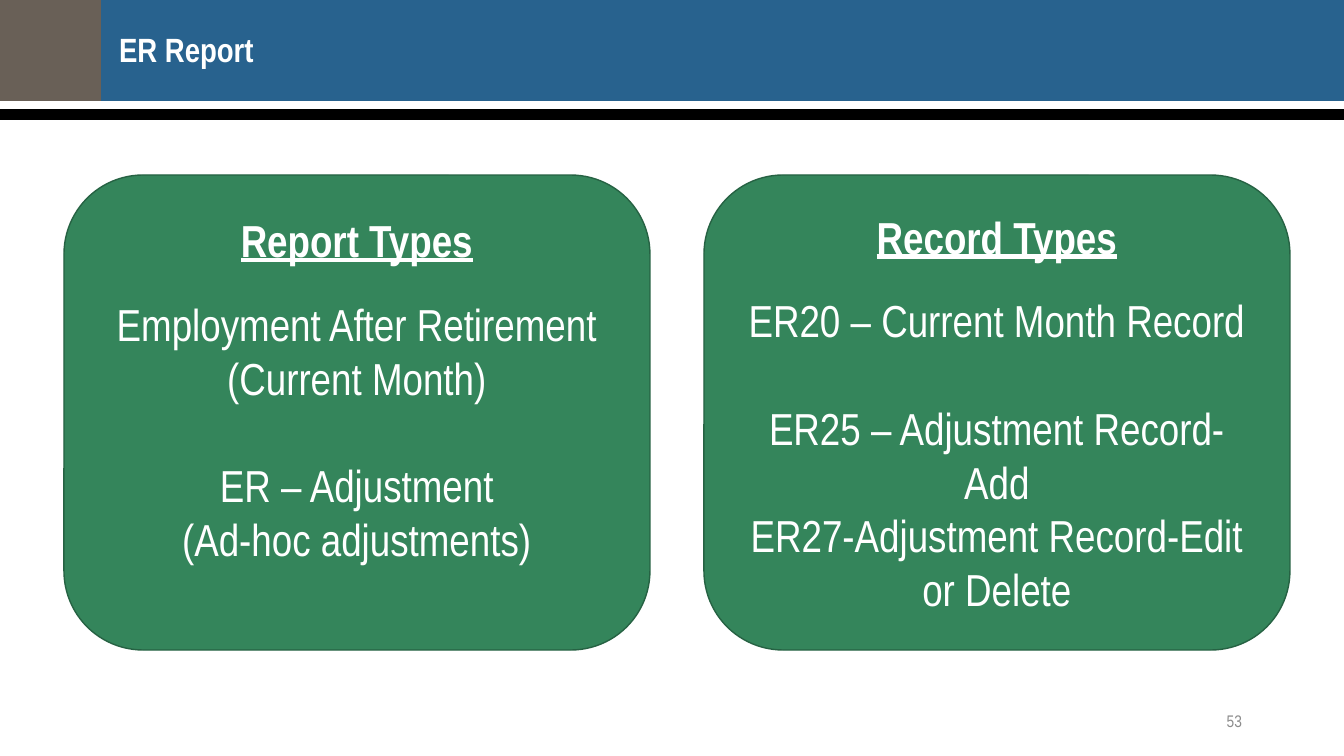
from pptx import Presentation
from pptx.dml.color import RGBColor
from pptx.enum.shapes import MSO_SHAPE as Shape
from pptx.enum.text import MSO_ANCHOR as Anchor, PP_ALIGN as Align
from pptx.util import Pt

PX = 12192000 / 1344


def px(*lengths):
    return [round(length * PX) for length in lengths]


def color(hex_code):
    return RGBColor.from_string(hex_code)


deck = Presentation()
deck.slide_width, deck.slide_height = px(1344, 756)
slide = deck.slides.add_slide(deck.slide_layouts[6])

header_bands = [
    (101, 0, 1243, 101, "28628E"),
    (0, 0, 101, 101, "696057"),
    (0, 109, 1344, 11, "000000"),
]
for *bounds, fill in header_bands:
    band = slide.shapes.add_shape(Shape.RECTANGLE, *px(*bounds))
    band.shadow.inherit = False
    band.fill.solid()
    band.fill.fore_color.rgb = color(fill)
    band.line.fill.background()

labels = [
    ("53", (950, 701, 302, 40), 12, "8C8C8C", False, Align.RIGHT, Anchor.MIDDLE, 10, 1.0),
    ("ER Report", (119, 33, 1132, 56), 24, "FFFFFF", True, Align.LEFT, Anchor.TOP, 0, 0.9),
]
for text, bounds, size, ink, bold, align, anchor, inset, spacing in labels:
    frame = slide.shapes.add_textbox(*px(*bounds)).text_frame
    frame.word_wrap = True
    frame.vertical_anchor = anchor
    frame.margin_left, frame.margin_right = px(inset, inset)
    frame.margin_top = frame.margin_bottom = 0
    paragraph = frame.paragraphs[0]
    paragraph.text = text
    paragraph.alignment = align
    paragraph.line_spacing = spacing
    paragraph.font.name = "Arial Narrow"
    paragraph.font.size = Pt(size)
    paragraph.font.bold = bold
    paragraph.font.color.rgb = color(ink)

cards = [
    (52, [
        ("Report Types", 0),
        ("Employment After Retirement", 21.5),
        ("(Current Month)", 0),
        ("ER – Adjustment", 38.3),
        ("(Ad-hoc adjustments)", 0),
    ]),
    (5, [
        ("Record Types", 0),
        ("ER20 – Current Month Record", 21.5),
        ("ER25 – Adjustment Record-Add", 38.3),
        ("ER27-Adjustment Record-Edit or Delete", 0),
    ]),
]
for column, (bottom_inset, lines) in enumerate(cards):
    card = slide.shapes.add_shape(Shape.ROUNDED_RECTANGLE, *px(64 + 640 * column, 175, 586, 475))
    card.shadow.inherit = False
    card.fill.solid()
    card.fill.fore_color.rgb = color("34855B")
    card.line.color.rgb = color("266243")
    card.line.width = Pt(1)
    frame = card.text_frame
    frame.word_wrap = True
    frame.vertical_anchor = Anchor.MIDDLE
    frame.margin_bottom = px(bottom_inset)[0]
    for row, (text, gap) in enumerate(lines):
        paragraph = frame.add_paragraph() if row else frame.paragraphs[0]
        paragraph.text = text
        paragraph.alignment = Align.CENTER
        if gap:
            paragraph.space_before = Pt(gap)
        paragraph.font.name = "Arial Narrow"
        paragraph.font.size = Pt(32)
        paragraph.font.bold = paragraph.font.underline = row == 0
        paragraph.font.color.rgb = color("FFFFFF")

deck.save("out.pptx")
